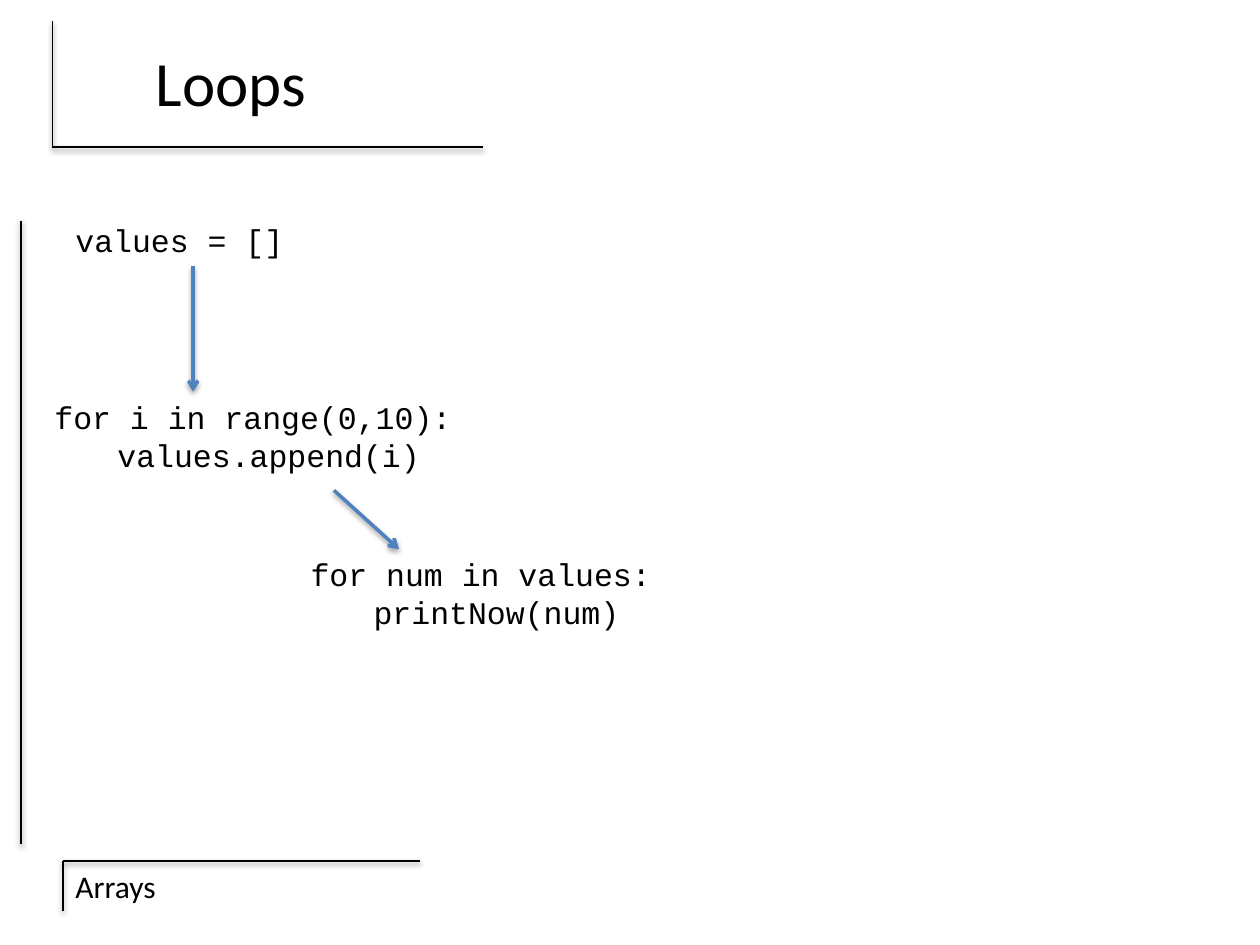
from dataclasses import dataclass

from lxml.etree import SubElement
from pptx import Presentation
from pptx.dml.color import RGBColor
from pptx.enum.shapes import MSO_CONNECTOR
from pptx.enum.text import MSO_ANCHOR, PP_ALIGN
from pptx.oxml.ns import qn
from pptx.util import Inches, Pt

COLORS = {"ink": "000000", "arrow": "4F81BD", "paper": "FFFFFF"}
COLUMNS, ROWS = 60, 45  # square cells, six to the inch
TITLE = {"name": "Calibri", "size": Pt(36)}
FOOTER = {"name": "Calibri", "size": Pt(18)}
CODE = {"name": "Courier New", "size": Pt(18)}
SHADOW = {"blurRad": Pt(3.1), "dist": Pt(1.6), "dir": 90 * 60000, "rotWithShape": 0}


def cells(count):
    return Inches(count / 6)


@dataclass
class Box:
    """An area of the page in grid cells."""
    left: float
    top: float
    width: float
    height: float

    def inner(self, left, top, width, height):
        return Box(self.left + left, self.top + top, width, height)

    def point(self, column, row):
        return cells(self.left + column), cells(self.top + row)


def add_line(page, start, end, color="ink", weight=1, arrow=False):
    line = page.shapes.add_connector(MSO_CONNECTOR.STRAIGHT, *start, *end)
    line.line.color.rgb = RGBColor.from_string(COLORS[color])
    line.line.width = Pt(weight)
    if arrow:
        SubElement(line.line._get_or_add_ln(), qn("a:tailEnd"), type="arrow")
    # Soft shadow below the line
    effects = SubElement(line._element.spPr, qn("a:effectLst"))
    shadow = SubElement(effects, qn("a:outerShdw"),
                        {key: str(value) for key, value in SHADOW.items()})
    tint = SubElement(shadow, qn("a:srgbClr"), val=COLORS["ink"])
    SubElement(tint, qn("a:alpha"), val="38000")


def add_text(page, box, lines, style, align=PP_ALIGN.LEFT, anchor=MSO_ANCHOR.TOP):
    """Write (text, indent in cells) lines into the box."""
    shape = page.shapes.add_textbox(*box.point(0, 0), cells(box.width), cells(box.height))
    frame = shape.text_frame
    frame.word_wrap = True
    frame.vertical_anchor = anchor
    for number, (text, indent) in enumerate(lines):
        para = frame.paragraphs[0] if number == 0 else frame.add_paragraph()
        para.alignment = align
        if indent:
            para._p.get_or_add_pPr().set("marL", str(cells(indent)))
        span = para.add_run()
        span.text = text
        for name, value in style.items():
            setattr(span.font, name, value)
        span.font.color.rgb = RGBColor.from_string(COLORS["ink"])


def add_title(page, box):
    # Corner rule on the left and bottom edges
    corner = box.point(0, box.height)
    add_line(page, box.point(box.width, box.height), corner)
    add_line(page, box.point(0, 0), corner)
    add_text(page, box.inner(0.5, 0, 16, 5.7), [("Loops", 0)], TITLE,
             PP_ALIGN.CENTER, MSO_ANCHOR.MIDDLE)


def add_footer(page, box):
    # Corner rule on the top and left edges
    corner = box.point(0, 0)
    add_line(page, box.point(box.width, 0), corner)
    add_line(page, corner, box.point(0, box.height))
    add_text(page, box.inner(0, 0, 14.5, 2.4), [("Arrays", 0)], FOOTER)


def add_code_flow(page, box):
    # Code steps, with loop bodies indented
    steps = [
        ((2, 0, 11.4, 2.4), [("values = []", 0)]),
        ((1, 8.4, 20.3, 6), [("for i in range(0,10):", 0), ("values.append(i)", 3)]),
        ((13.2, 15.9, 17.6, 6), [("for num in values:", 0), ("printNow(num)", 3)]),
    ]
    for area, lines in steps:
        add_text(page, box.inner(*area), lines, CODE)
    # Arrows from step to step
    for start, end in [((8.2, 2.4), (8.2, 8.4)), ((14.9, 13.1), (18, 15.9))]:
        add_line(page, box.point(*start), box.point(*end), "arrow", 2, arrow=True)
    # Side rule
    add_line(page, box.point(0, 0.25), box.point(0, box.height))


def main():
    deck = Presentation()
    deck.slide_width, deck.slide_height = cells(COLUMNS), cells(ROWS)
    page = deck.slides.add_slide(deck.slide_layouts[6])
    page.background.fill.solid()
    page.background.fill.fore_color.rgb = RGBColor.from_string(COLORS["paper"])
    add_title(page, Box(2.5, 1, 20.5, 6))
    add_code_flow(page, Box(1, 10.25, 31, 29.95))
    add_footer(page, Box(3, 41, 17, 2.4))
    deck.save("out.pptx")


if __name__ == "__main__":
    main()
